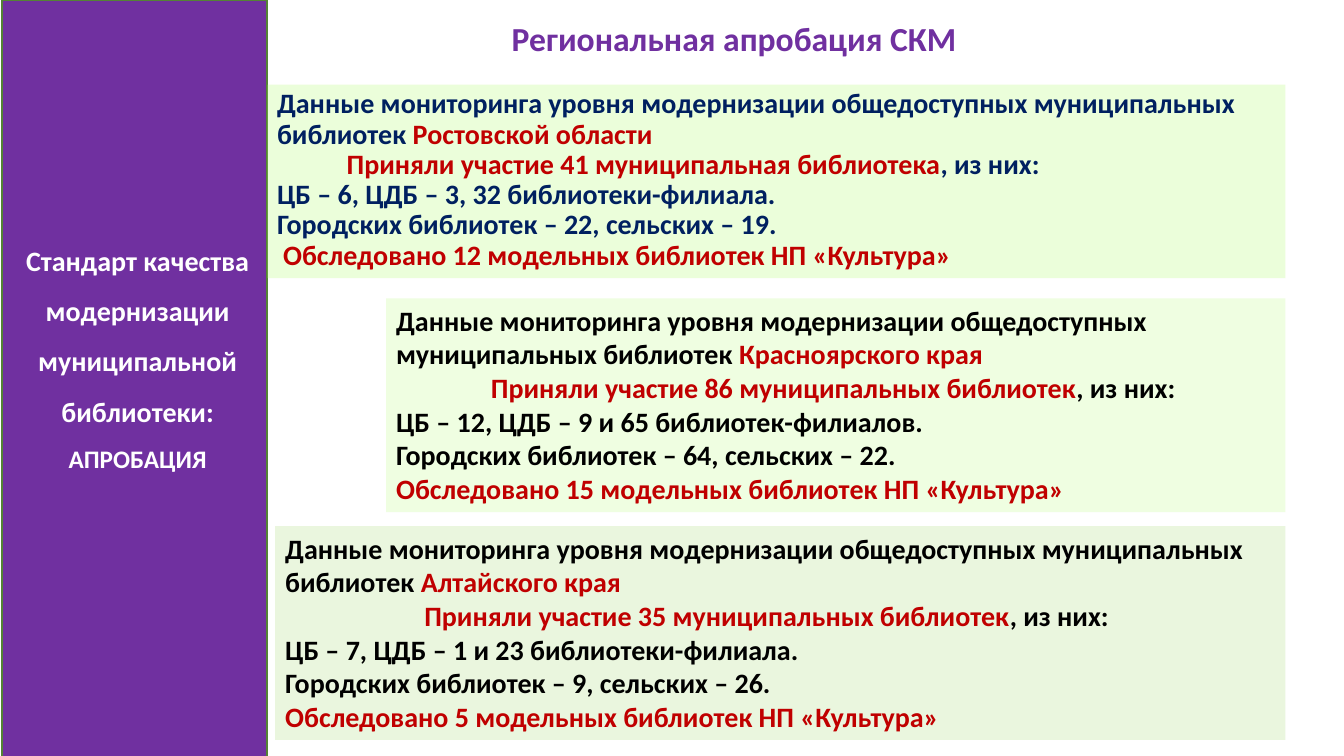
import pptx
import pptx.dml.color
import pptx.enum.shapes
import pptx.enum.text
import pptx.oxml.ns
import pptx.util
from lxml import etree

Inches = pptx.util.Inches
ALIGN = pptx.enum.text.PP_ALIGN
ANCHOR = pptx.enum.text.MSO_ANCHOR

COLORS = {
    "purple": "7030A0",
    "border": "548235",
    "lime": "AAFC60",
    "green": "92D050",
    "navy": "002060",
    "red": "C00000",
    "black": "000000",
    "white": "FFFFFF",
}


def rgb(name):
    return pptx.dml.color.RGBColor.from_string(COLORS[name])


def set_attributes(target, values):
    for name, value in values.items():
        setattr(target, name, value)


class SlideBuilder:
    """Holds the text style and the slide being filled."""

    font = {"name": "Calibri", "bold": True}

    def __init__(self, slide):
        self.slide = slide

    def fill_text(self, shape, paragraphs, align=ALIGN.LEFT, spacing=1.0, **frame_format):
        """Each paragraph is (first-line indent in inches, size, [(text, color), ...])."""
        frame = shape.text_frame
        set_attributes(frame, {"word_wrap": True, "vertical_anchor": ANCHOR.TOP, **frame_format})
        for index, (indent, size, runs) in enumerate(paragraphs):
            paragraph = frame.add_paragraph() if index else frame.paragraphs[0]
            set_attributes(paragraph, {"alignment": align, "line_spacing": spacing})
            paragraph._p.get_or_add_pPr().set("indent", str(Inches(indent)))
            for text, color in runs:
                run = paragraph.add_run()
                run.text = text
                set_attributes(run.font, {**self.font, "size": pptx.util.Pt(size)})
                run.font.color.rgb = rgb(color)

    def text_box(self, box, paragraphs, **text_format):
        shape = self.slide.shapes.add_textbox(*map(Inches, box))
        self.fill_text(shape, paragraphs, **text_format)

    def rectangle(self, box, fill, paragraphs, opacity=100, border=None, **text_format):
        shape = self.slide.shapes.add_shape(
            pptx.enum.shapes.MSO_SHAPE.RECTANGLE, *map(Inches, box))
        shape.shadow.inherit = False
        shape.fill.solid()
        shape.fill.fore_color.rgb = rgb(fill)
        if opacity < 100:
            color = shape.fill._xPr.find(".//" + pptx.oxml.ns.qn("a:srgbClr"))
            alpha = etree.SubElement(color, pptx.oxml.ns.qn("a:alpha"))
            alpha.set("val", str(opacity * 1000))
        if border:
            shape.line.color.rgb = rgb(border)
            shape.line.width = pptx.util.Pt(1)
        else:
            shape.line.fill.background()
        self.fill_text(shape, paragraphs, **text_format)

    def region(self, box, fill, opacity, color, name, participants, counts,
               surveyed, indents, spacing=1.0):
        """Panel with the monitoring results of one region."""
        heading = ("Данные мониторинга уровня модернизации "
                   "общедоступных муниципальных библиотек ")
        participants_indent, surveyed_indent = indents
        paragraphs = [
            (0, 20, [(heading, color), (name, "red")]),
            (participants_indent, 20,
             [(f"Приняли участие {participants}", "red"), (", из них:", color)]),
            *((0, 20, [(count, color)]) for count in counts),
            (surveyed_indent, 20,
             [(f"Обследовано {surveyed} модельных библиотек НП «Культура»", "red")]),
        ]
        self.rectangle(box, fill, paragraphs, opacity, spacing=spacing)


def main():
    presentation = pptx.Presentation()
    set_attributes(presentation, {"slide_width": Inches(13.33), "slide_height": Inches(7.5)})
    builder = SlideBuilder(presentation.slides.add_slide(presentation.slide_layouts[6]))

    builder.rectangle(
        (0.02, 0, 2.63, 7.52), "purple",
        [(0, 20, [("Стандарт качества модернизации муниципальной библиотеки:", "white")]),
         (0, 18, [("АПРОБАЦИЯ", "white")])],
        border="border", align=ALIGN.CENTER, spacing=1.5,
        vertical_anchor=ANCHOR.MIDDLE, margin_left=Inches(0.16), margin_bottom=Inches(0.63))

    builder.text_box(
        (3.83, 0.13, 6.46, 0.5),
        [(0, 24, [("Региональная апробация СКМ", "purple")])],
        align=ALIGN.CENTER, margin_left=Inches(0.54))

    builder.region(
        (2.65, 0.84, 10.1, 1.92), "lime", 23, "navy",
        "Ростовской области", "41 муниципальная библиотека",
        ["ЦБ – 6, ЦДБ – 3, 32 библиотеки-филиала.",
         "Городских библиотек – 22, сельских – 19."],
        12, (0.69, 0.06), spacing=0.9)
    builder.region(
        (3.83, 2.96, 8.92, 2.12), "lime", 19, "black",
        "Красноярского края", "86 муниципальных библиотек",
        ["ЦБ – 12, ЦДБ – 9 и 65 библиотек-филиалов.",
         "Городских библиотек – 64, сельских – 22."],
        15, (0.94, 0))
    builder.region(
        (2.73, 5.22, 10.02, 2.12), "green", 19, "black",
        "Алтайского края", "35 муниципальных библиотек",
        ["ЦБ – 7, ЦДБ – 1 и 23 библиотеки-филиала.",
         "Городских библиотек – 9, сельских – 26."],
        5, (1.38, 0))

    presentation.save("out.pptx")


if __name__ == "__main__":
    main()
